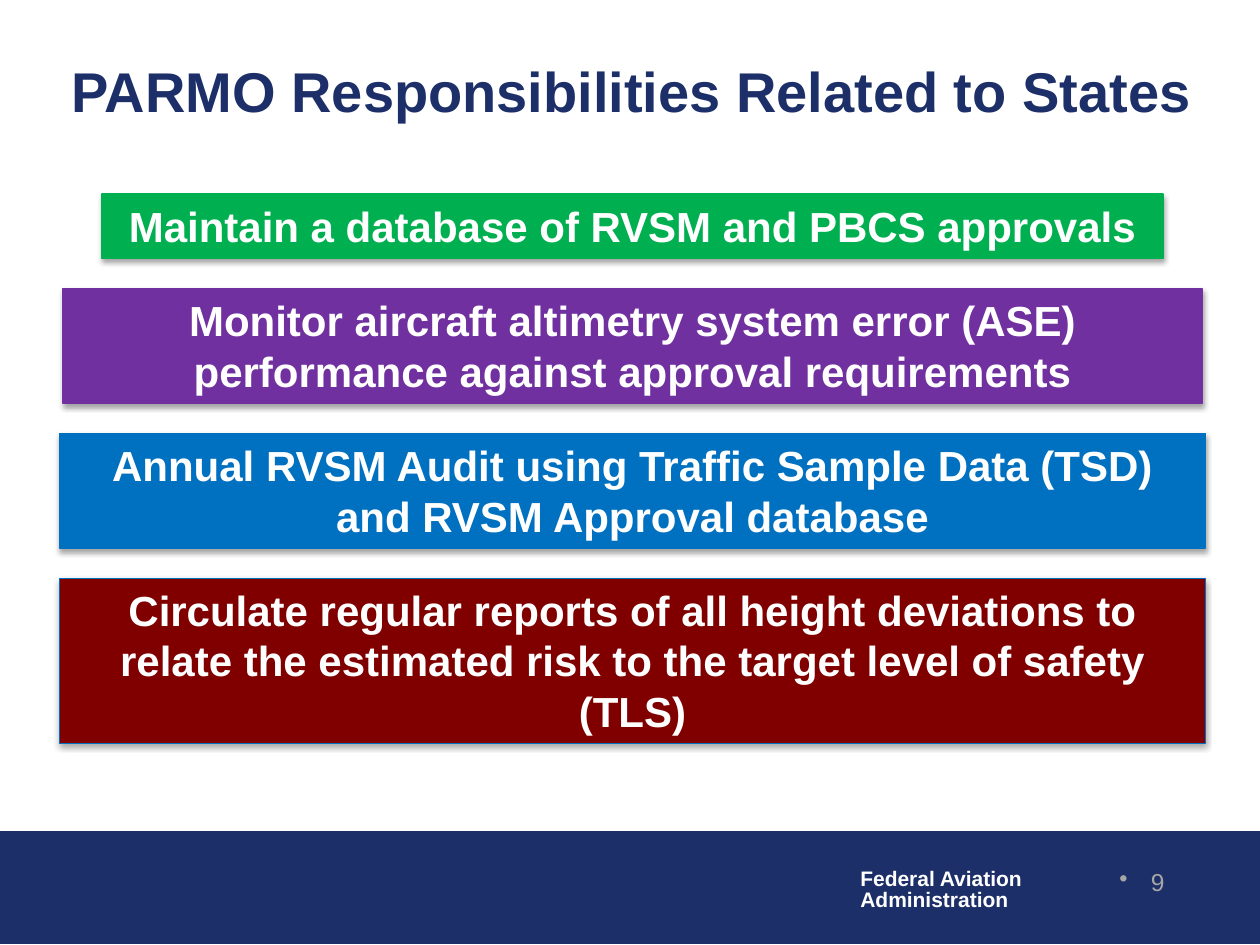
from dataclasses import dataclass

import pptx
import pptx.dml.color
import pptx.enum.shapes
import pptx.enum.text
import pptx.oxml
import pptx.oxml.ns
import pptx.util
from pptx.util import Inches

ALIGN = pptx.enum.text.PP_ALIGN
ANCHOR = pptx.enum.text.MSO_ANCHOR


@dataclass(frozen=True)
class Theme:
    font: str = "Arial"
    navy: str = "1D2F68"
    white: str = "FFFFFF"
    gray: str = "A6A6A6"
    green: str = "00B050"
    purple: str = "7030A0"
    blue: str = "0070C0"
    maroon: str = "800000"
    title_size: int = 32
    duty_size: int = 24
    number_size: int = 14
    agency_size: int = 12


THEME = Theme()

# Text, width, height, fill, outline
DUTIES = [
    ("Maintain a database of RVSM and PBCS approvals",
     8.42, 0.51, THEME.green, THEME.green),
    ("Monitor aircraft altimetry system error (ASE) performance against approval requirements",
     9.04, 0.91, THEME.purple, THEME.purple),
    ("Annual RVSM Audit using Traffic Sample Data (TSD) and RVSM Approval database",
     9.1, 0.91, THEME.blue, THEME.blue),
    ("Circulate regular reports of all height deviations to relate the estimated risk "
     "to the target level of safety (TLS)",
     9.1, 1.31, THEME.maroon, THEME.blue),
]
DUTY_GAP = 0.24


def color(value):
    return pptx.dml.color.RGBColor.from_string(value)


def write(shape, text, *, size, ink=THEME.white, bold=True, align=ALIGN.LEFT,
          anchor=ANCHOR.TOP, wrap=True, line_spacing=None, bullet=False):
    """Fill a shape with text, one paragraph per line."""
    frame = shape.text_frame
    frame.word_wrap = wrap
    frame.vertical_anchor = anchor
    frame.text = text
    for paragraph in frame.paragraphs:
        paragraph.alignment = align
        if line_spacing:
            paragraph.line_spacing = line_spacing
        if bullet:
            add_bullet(paragraph)
        font = paragraph.font
        font.name = THEME.font
        font.size = pptx.util.Pt(size)
        font.bold = bold
        font.color.rgb = color(ink)


def add_bullet(paragraph):
    properties = paragraph._p.get_or_add_pPr()
    properties.set("marL", str(Inches(0.25)))
    properties.set("indent", str(-Inches(0.25)))
    properties.append(pptx.oxml.parse_xml(
        f'<a:buChar {pptx.oxml.ns.nsdecls("a")} char="•"/>'))


def add_text(slide, box, text, **text_format):
    shape = slide.shapes.add_textbox(*map(Inches, box))
    write(shape, text, **text_format)


def add_rectangle(slide, box, fill, outline):
    shape = slide.shapes.add_shape(
        pptx.enum.shapes.MSO_SHAPE.RECTANGLE, *map(Inches, box))
    shape.shadow.inherit = False
    shape.fill.solid()
    shape.fill.fore_color.rgb = color(fill)
    shape.line.color.rgb = color(outline)
    shape.line.width = pptx.util.Pt(0.75)
    return shape


def add_drop_shadow(shape):
    effects = shape._element.spPr.find(pptx.oxml.ns.qn("a:effectLst"))
    effects.append(pptx.oxml.parse_xml(
        f'<a:outerShdw {pptx.oxml.ns.nsdecls("a")} blurRad="40000" dist="23000" '
        'dir="5400000" rotWithShape="0"><a:srgbClr val="000000">'
        '<a:alpha val="35000"/></a:srgbClr></a:outerShdw>'))


def add_footer(slide, box):
    left, top, width, height = box
    add_rectangle(slide, box, THEME.navy, THEME.navy)
    add_text(slide, (left + 6.73, top + 0.25, 1.5, 0.44),
             "Federal Aviation\nAdministration",
             size=THEME.agency_size, wrap=False, line_spacing=0.85)
    add_text(slide, (left + 8.38, top + 0.23, 0.96, 0.5), "9",
             size=THEME.number_size, ink=THEME.gray, bold=False,
             align=ALIGN.RIGHT, bullet=True)


def add_title(slide, box):
    add_text(slide, box, "PARMO Responsibilities Related to States",
             size=THEME.title_size, ink=THEME.navy, anchor=ANCHOR.MIDDLE)


def add_duties(slide, box):
    """Stack the duty bars from the top of the box, each centred in its width."""
    left, top, box_width, _ = box
    for text, width, height, fill, outline in DUTIES:
        bar_left = left + (box_width - width) / 2
        bar = add_rectangle(slide, (bar_left, top, width, height), fill, outline)
        add_drop_shadow(bar)
        write(bar, text, size=THEME.duty_size, align=ALIGN.CENTER)
        top += height + DUTY_GAP


def main():
    presentation = pptx.Presentation()
    presentation.slide_width = Inches(10)
    presentation.slide_height = Inches(7.5)
    slide = presentation.slides.add_slide(presentation.slide_layouts[6])
    add_footer(slide, (0, 6.6, 10, 0.89))
    add_title(slide, (0.47, 0.38, 9.27, 0.67))
    add_duties(slide, (0.47, 1.54, 9.1, 4.36))
    presentation.save("out.pptx")


if __name__ == "__main__":
    main()
